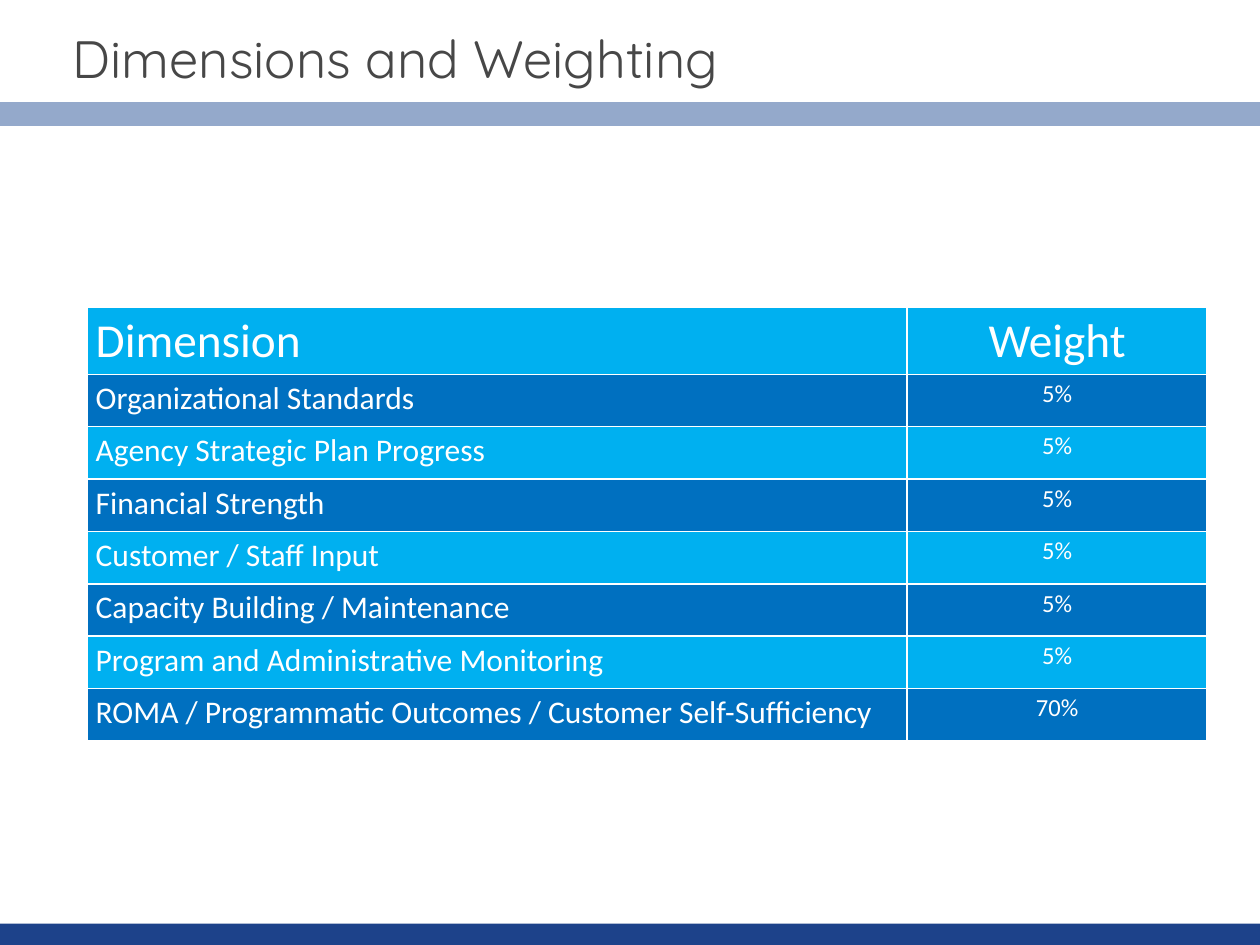
from dataclasses import dataclass

from lxml import etree
from pptx import Presentation
from pptx.dml.color import RGBColor
from pptx.enum.shapes import MSO_SHAPE
from pptx.enum.text import MSO_ANCHOR, PP_ALIGN
from pptx.oxml.ns import qn
from pptx.util import Inches, Pt

RECTANGLE = MSO_SHAPE.RECTANGLE
MIDDLE = MSO_ANCHOR.MIDDLE
LEFT, CENTER = PP_ALIGN.LEFT, PP_ALIGN.CENTER


@dataclass(frozen=True)
class Theme:
    title_font: str = "Quicksand"
    table_font: str = "Calibri"
    title_color: str = "474747"
    top_band: str = "94A9CB"
    bottom_band: str = "1D428A"
    light_row: str = "00B0F0"
    dark_row: str = "0070C0"
    white: str = "FFFFFF"
    title_size: int = 30
    header_size: int = 27
    dimension_size: int = 18
    weight_size: int = 14


theme = Theme()


def format_paragraph(paragraph, font_name, size, color, alignment=LEFT):
    paragraph.alignment = alignment
    for run in paragraph.runs:
        run.font.name = font_name
        run.font.size = Pt(size)
        run.font.bold = False
        run.font.color.rgb = RGBColor.from_string(color)


def add_cell_borders(cell, color, width):
    properties = cell._tc.get_or_add_tcPr()
    for side in ("a:lnL", "a:lnR", "a:lnT", "a:lnB"):
        line = etree.SubElement(properties, qn(side), w=str(Pt(width)))
        fill = etree.SubElement(line, qn("a:solidFill"))
        etree.SubElement(fill, qn("a:srgbClr"), val=color)


presentation = Presentation()
presentation.slide_width = Inches(10)
presentation.slide_height = Inches(7.5)
slide = presentation.slides.add_slide(presentation.slide_layouts[6])

bands = [(0.81, 0.19, theme.top_band), (7.33, 0.17, theme.bottom_band)]
for top, height, color in bands:
    band = slide.shapes.add_shape(
        RECTANGLE, 0, Inches(top), presentation.slide_width, Inches(height)
    )
    band.shadow.inherit = False
    band.fill.solid()
    band.fill.fore_color.rgb = RGBColor.from_string(color)
    band.line.fill.background()

title = slide.shapes.add_textbox(Inches(0.48), Inches(0.08), Inches(9.19), Inches(0.75))
title.text_frame.word_wrap = True
title.text_frame.vertical_anchor = MIDDLE
title.text_frame.text = "Dimensions and Weighting"
format_paragraph(
    title.text_frame.paragraphs[0], theme.title_font, theme.title_size, theme.title_color
)

rows = [
    ("Dimension", "Weight"),
    ("Organizational Standards", "5%"),
    ("Agency Strategic Plan Progress", "5%"),
    ("Financial Strength", "5%"),
    ("Customer / Staff Input", "5%"),
    ("Capacity Building / Maintenance", "5%"),
    ("Program and Administrative Monitoring", "5%"),
    ("ROMA / Programmatic Outcomes / Customer Self-Sufficiency", "70%"),
]
column_widths = [6.51, 2.38]
header_height, row_height = 0.53, 0.416
table_height = header_height + row_height * (len(rows) - 1)
table = slide.shapes.add_table(
    len(rows), len(column_widths),
    Inches(0.69), Inches(2.44), Inches(sum(column_widths)), Inches(table_height),
).table
for column, width in zip(table.columns, column_widths):
    column.width = Inches(width)

body_sizes = (theme.dimension_size, theme.weight_size)
for row_index, values in enumerate(rows):
    is_header = row_index == 0
    table.rows[row_index].height = Inches(header_height if is_header else row_height)
    row_color = theme.dark_row if row_index % 2 else theme.light_row
    for column_index, value in enumerate(values):
        cell = table.cell(row_index, column_index)
        cell.margin_left = cell.margin_right = Inches(0.07)
        cell.margin_top = cell.margin_bottom = Inches(0.04)
        add_cell_borders(cell, theme.white, 1)
        cell.fill.solid()
        cell.fill.fore_color.rgb = RGBColor.from_string(row_color)
        cell.text_frame.text = value
        format_paragraph(
            cell.text_frame.paragraphs[0],
            theme.table_font,
            theme.header_size if is_header else body_sizes[column_index],
            theme.white,
            CENTER if column_index else LEFT,
        )

presentation.save("out.pptx")
